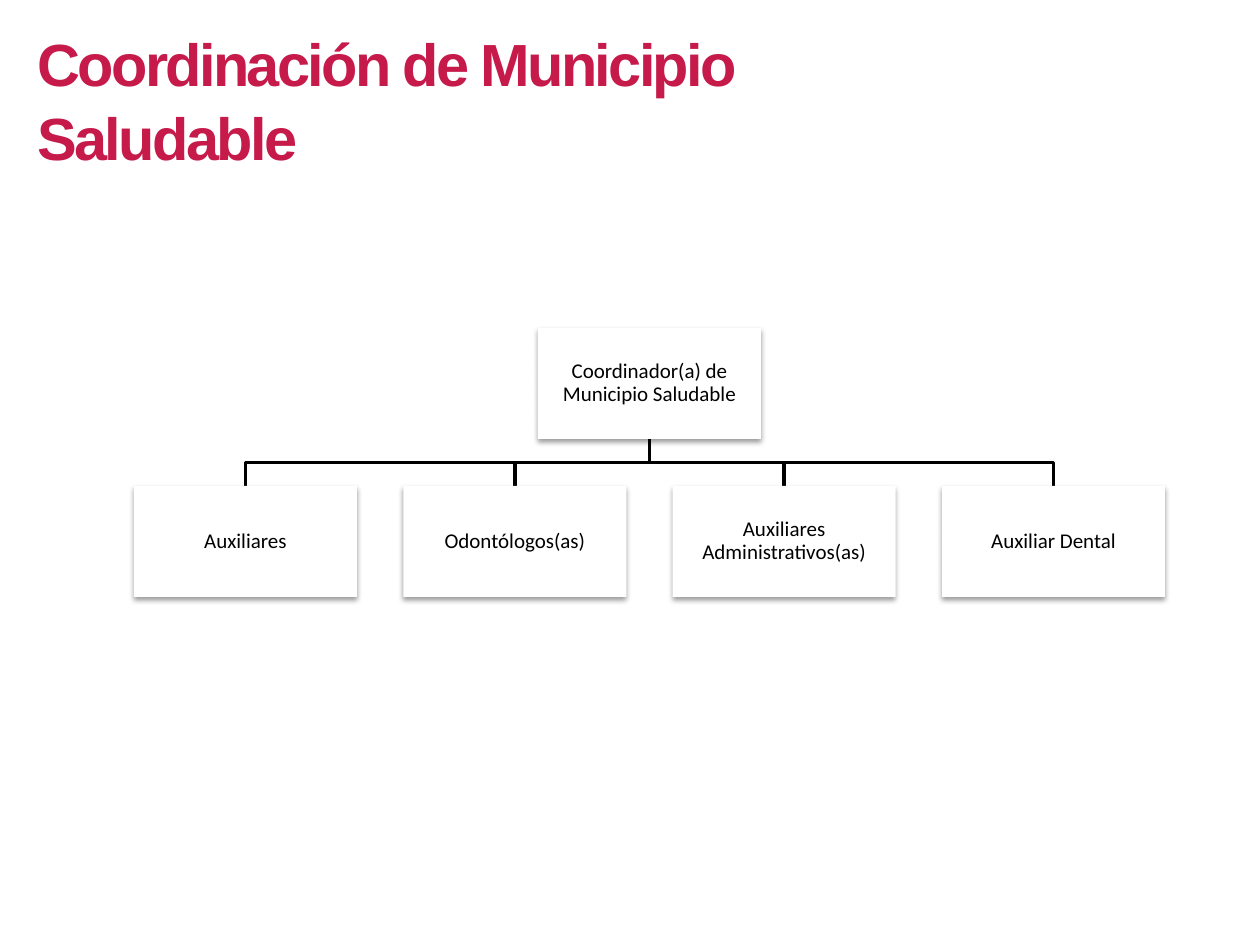
import pptx
import pptx.util
import pptx.dml.color
import pptx.enum.shapes
import pptx.enum.text
import pptx.oxml

COLORS = {"title": "C51A4A", "box": "FFFFFF", "ink": "000000"}
SHADOW = (
    '<a:effectLst xmlns:a="http://schemas.openxmlformats.org/drawingml/2006/main">'
    '<a:outerShdw blurRad="39370" dist="20320" dir="5400000" rotWithShape="0">'
    '<a:srgbClr val="{}"><a:alpha val="38000"/></a:srgbClr>'
    "</a:outerShdw></a:effectLst>"
)


def px(n):
    """Pixels at 126 to the inch, in EMU."""
    return round(n * 914400 / 126)


def color(name):
    return pptx.dml.color.RGBColor.from_string(COLORS[name])


def add_run(p, text, font, size, ink, bold=False):
    r = p.add_run()
    r.text = text
    r.font.name = font
    r.font.size = pptx.util.Pt(size)
    r.font.bold = bold
    r.font.color.rgb = color(ink)
    return r


def add_title(s, text, left, top, width, height):
    sp = s.shapes.title
    sp.left, sp.top, sp.width, sp.height = map(px, (left, top, width, height))
    tf = sp.text_frame
    tf.word_wrap = True
    tf.auto_size = pptx.enum.text.MSO_AUTO_SIZE.NONE
    tf.vertical_anchor = pptx.enum.text.MSO_ANCHOR.TOP
    p = tf.paragraphs[0]
    p.alignment = pptx.enum.text.PP_ALIGN.LEFT
    p.line_spacing = 1.04
    r = add_run(p, text, "Arial", 34, "title", bold=True)
    r.font._element.set("spc", "-150")


def add_box(s, text, left, top, width, height):
    sp = s.shapes.add_shape(
        pptx.enum.shapes.MSO_SHAPE.RECTANGLE,
        px(left), px(top), px(width), px(height))
    sp.fill.solid()
    sp.fill.fore_color.rgb = color("box")
    sp.line.fill.background()
    sp._element.spPr.append(pptx.oxml.parse_xml(SHADOW.format(COLORS["ink"])))
    tf = sp.text_frame
    tf.word_wrap = True
    tf.vertical_anchor = pptx.enum.text.MSO_ANCHOR.MIDDLE
    tf.margin_left = tf.margin_right = tf.margin_top = tf.margin_bottom = px(1)
    p = tf.paragraphs[0]
    p.alignment = pptx.enum.text.PP_ALIGN.CENTER
    p.line_spacing = 0.9
    add_run(p, text, "Calibri", 12, "ink")


def add_branch(s, x1, y1, x2, y2):
    """Stepped line from the root's bottom to a child's top."""
    mid = (y1 + y2) / 2
    fb = s.shapes.build_freeform(px(x1), px(y1))
    fb.add_line_segments(
        [(px(x), px(y)) for x, y in ((x1, mid), (x2, mid), (x2, y2))], close=False)
    sp = fb.convert_to_shape()
    sp.shadow.inherit = False
    sp.fill.background()
    sp.line.color.rgb = color("ink")
    sp.line.width = pptx.util.Pt(2)


def add_org_chart(s, root, children, left, top, width, height):
    box_w, box_h = 223, 111
    pitch = (width - box_w) / (len(children) - 1)
    center = left + width / 2
    child_top = top + height - box_h
    lefts = [left + i * pitch for i in range(len(children))]

    # Branches lie behind the boxes
    for x in reversed(lefts):
        add_branch(s, center, top + box_h, x + box_w / 2, child_top)

    add_box(s, root, center - box_w / 2, top, box_w, box_h)
    for x, text in zip(lefts, children):
        add_box(s, text, x, child_top, box_w, box_h)


def main():
    prs = pptx.Presentation()
    prs.slide_width, prs.slide_height = px(1260), px(945)
    s = prs.slides.add_slide(prs.slide_layouts[5])
    add_org_chart(
        s, "Coordinador(a) de Municipio Saludable",
        ["Auxiliares", "Odontólogos(as)", "Auxiliares Administrativos(as)",
         "Auxiliar Dental"],
        134, 328, 1031, 269)
    add_title(s, "Coordinación de Municipio Saludable", 25, 18, 960, 157)
    prs.save("out.pptx")


if __name__ == "__main__":
    main()
